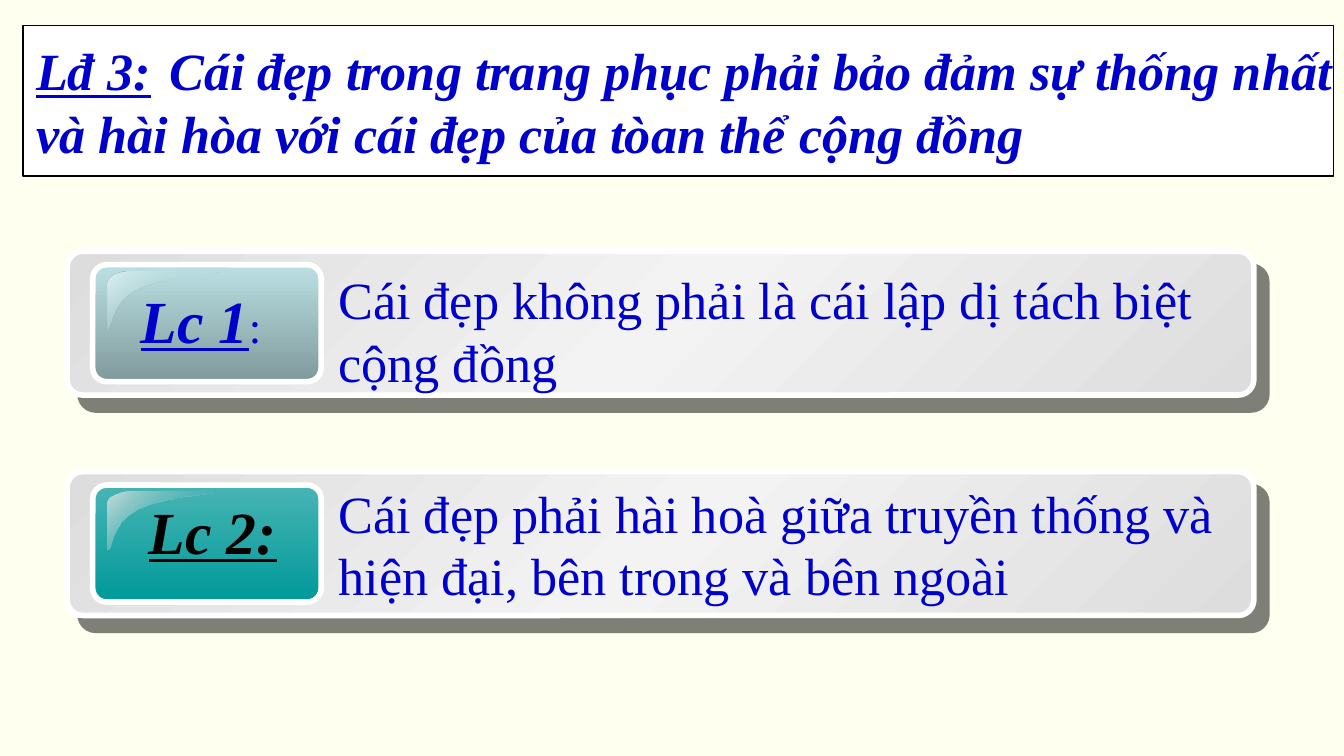
from lxml import etree
from pptx import Presentation
from pptx.dml.color import RGBColor
from pptx.enum.shapes import MSO_SHAPE
from pptx.enum.text import MSO_ANCHOR, MSO_AUTO_SIZE, PP_ALIGN
from pptx.oxml.ns import qn
from pptx.util import Inches, Pt

RECT, ROUNDED = MSO_SHAPE.RECTANGLE, MSO_SHAPE.ROUNDED_RECTANGLE
MIDDLE, CENTER, LEFT = MSO_ANCHOR.MIDDLE, PP_ALIGN.CENTER, PP_ALIGN.LEFT
GROW = MSO_AUTO_SIZE.SHAPE_TO_FIT_TEXT

PAGE_WIDTH = 10
PAGE_HEIGHT = PAGE_WIDTH * 9 / 16

THEME = {
    "page": "FEFFEE", "white": "FFFFFF", "black": "000000", "blue": "0000CC",
    "serif": "Times New Roman", "sans": "Arial",
    "label": 32, "body": 28, "colon": 24, "gap": 20,
}

# Content: each run is (text, size, colour, font, bold italic, underlined)
TITLE = [
    [("Lđ 3:", "body", "blue", "serif", True, True),
     ("  ", "gap", "black", "serif", True, False),
     ("Cái đẹp trong trang phục phải bảo đảm sự thống nhất",
      "body", "blue", "serif", True, False)],
    [("và hài hòa với cái đẹp của tòan thể cộng đồng",
      "body", "blue", "serif", True, False)],
]
# Gradient stops are (position %, colour, opacity %)
PANELS = [
    {"label": [("Lc 1", "label", "blue", "serif", True, True),
               (":", "colon", "blue", "serif", False, False),
               (" ", "body", "blue", "sans", False, False)],
     "label_at": (0.88, 0.19, 1.34, 0.64), "align": CENTER, "wrap": True,
     "body": "Cái đẹp không phải là cái lập dị tách biệt cộng đồng",
     "body_at": (2.42, 0.07, 6.83, 1.04),
     "badge": [(0, "BBE0E3", 100), (100, "809A9C", 100)],
     "gloss": [(0, "DDEFF0", 100), (50, "BBE0E3", 0), (100, "DDEFF0", 100)]},
    {"label": [("Lc 2:", "label", "black", "serif", True, True)],
     "label_at": (1.01, 0.12, 1.16, 0.64), "align": LEFT, "wrap": False,
     "body": "Cái đẹp phải hài hoà giữa truyền thống và hiện đại, "
             "bên trong và bên ngoài",
     "body_at": (2.42, 0.02, 7.08, 1.04),
     "badge": [(0, "48B4B4", 100), (100, "009999", 100)],
     "gloss": [(0, "C9DBDB", 100), (100, "009999", 0)]},
]
SILVER = [(0, "DDDDDD", 100), (50, "F3F3F3", 100), (100, "DDDDDD", 100)]
PANEL_TOP, PANEL_STEP = 1.87, 1.64

# Gloss outline, measured from the panel's top: start and Bezier curves
GLOSS_START = (0.97, 0.15)
GLOSS_CURVES = [
    [(0.97, 0.15), (0.88, 0.15), (0.80, 0.19), (0.80, 0.24)],
    [(0.80, 0.58), (0.84, 0.59), (0.82, 0.38), (1.03, 0.28)],
    [(1.03, 0.28), (1.24, 0.18), (1.65, 0.17), (1.64, 0.15)],
]
CURVE_STEPS = 12


def color(name):
    return RGBColor.from_string(THEME[name])


def add_color(parent, value, opacity):
    node = etree.SubElement(parent, qn("a:srgbClr"), val=value)
    if opacity < 100:
        etree.SubElement(node, qn("a:alpha"), val=str(opacity * 1000))


def fill_gradient(shape, stops, angle):
    shape.fill.solid()
    solid = shape._element.spPr.find(qn("a:solidFill"))
    gradient = etree.Element(qn("a:gradFill"), rotWithShape="1")
    stop_list = etree.SubElement(gradient, qn("a:gsLst"))
    for position, value, opacity in stops:
        stop = etree.SubElement(stop_list, qn("a:gs"), pos=str(position * 1000))
        add_color(stop, value, opacity)
    etree.SubElement(gradient, qn("a:lin"), ang=str(angle * 60000), scaled="0")
    solid.getparent().replace(solid, gradient)


def add_shadow(shape):
    effects = shape._element.spPr.find(qn("a:effectLst"))
    shadow = etree.SubElement(
        effects, qn("a:outerShdw"), blurRad="0", dist=str(Pt(10.6)),
        dir=str(49 * 60000), algn="ctr", rotWithShape="0")
    add_color(shadow, THEME["black"], 50)


def add_box(parent, kind, at, line, width):
    shape = parent.shapes.add_shape(kind, *map(Inches, at))
    shape.shadow.inherit = False
    shape.line.color.rgb = color(line)
    shape.line.width = Pt(width)
    return shape


def add_tile(parent, at, corner, stops, angle):
    tile = add_box(parent, ROUNDED, at, "white", 3)
    tile.adjustments[0] = corner
    fill_gradient(tile, stops, angle)
    return tile


def write(frame, paragraphs, align=LEFT, wrap=True):
    frame.word_wrap = wrap
    for index, runs in enumerate(paragraphs):
        para = frame.paragraphs[0] if index == 0 else frame.add_paragraph()
        para.alignment = align
        for text, size, ink, face, strong, underlined in runs:
            span = para.add_run()
            span.text = text
            span.font.size = Pt(THEME[size])
            span.font.name = THEME[face]
            span.font.color.rgb = color(ink)
            span.font.bold = span.font.italic = strong
            span.font.underline = underlined


def add_text(parent, at, top, runs, align=LEFT, wrap=True):
    left, offset, width, height = at
    box = parent.shapes.add_textbox(
        Inches(left), Inches(top + offset), Inches(width), Inches(height))
    write(box.text_frame, [runs], align, wrap)
    box.text_frame.auto_size = GROW


def bezier(points, t):
    weights = ((1 - t) ** 3, 3 * t * (1 - t) ** 2, 3 * t * t * (1 - t), t ** 3)
    return tuple(sum(w * p[axis] for w, p in zip(weights, points))
                 for axis in (0, 1))


def add_gloss(parent, top, stops):
    points = [bezier(curve, step / CURVE_STEPS)
              for curve in GLOSS_CURVES for step in range(CURVE_STEPS + 1)]
    x, y = GLOSS_START
    builder = parent.shapes.build_freeform(
        Inches(x), Inches(top + y), scale=1.0)
    builder.add_line_segments(
        [(Inches(px), Inches(top + py)) for px, py in points[1:]], close=True)
    gloss = builder.convert_to_shape()
    gloss.shadow.inherit = False
    gloss.line.fill.background()
    fill_gradient(gloss, stops, 45)


def add_panel(page, top, panel):
    group = page.shapes.add_group_shape()
    bar = add_tile(group, (0.5, top, 8.83, 1.07), 0.109, SILVER, 45)
    add_shadow(bar)
    add_tile(group, (0.69, top + 0.1, 1.7, 0.87), 0.119, panel["badge"], 90)
    add_gloss(group, top, panel["gloss"])
    add_text(group, panel["label_at"], top, panel["label"],
             panel["align"], panel["wrap"])
    body = [(panel["body"], "body", "blue", "serif", False, False)]
    add_text(group, panel["body_at"], top, body)


def main():
    deck = Presentation()
    deck.slide_width = Inches(PAGE_WIDTH)
    deck.slide_height = Inches(PAGE_HEIGHT)
    page = deck.slides.add_slide(deck.slide_layouts[6])
    page.background.fill.solid()
    page.background.fill.fore_color.rgb = color("page")

    # Heading
    heading = add_box(page, RECT, (0.17, 0.19, 9.75, 1.12), "black", 0.75)
    heading.fill.solid()
    heading.fill.fore_color.rgb = color("white")
    heading.text_frame.vertical_anchor = MIDDLE
    write(heading.text_frame, TITLE, wrap=False)

    # Argument panels
    for index, panel in enumerate(PANELS):
        add_panel(page, PANEL_TOP + index * PANEL_STEP, panel)

    deck.save("out.pptx")


if __name__ == "__main__":
    main()
